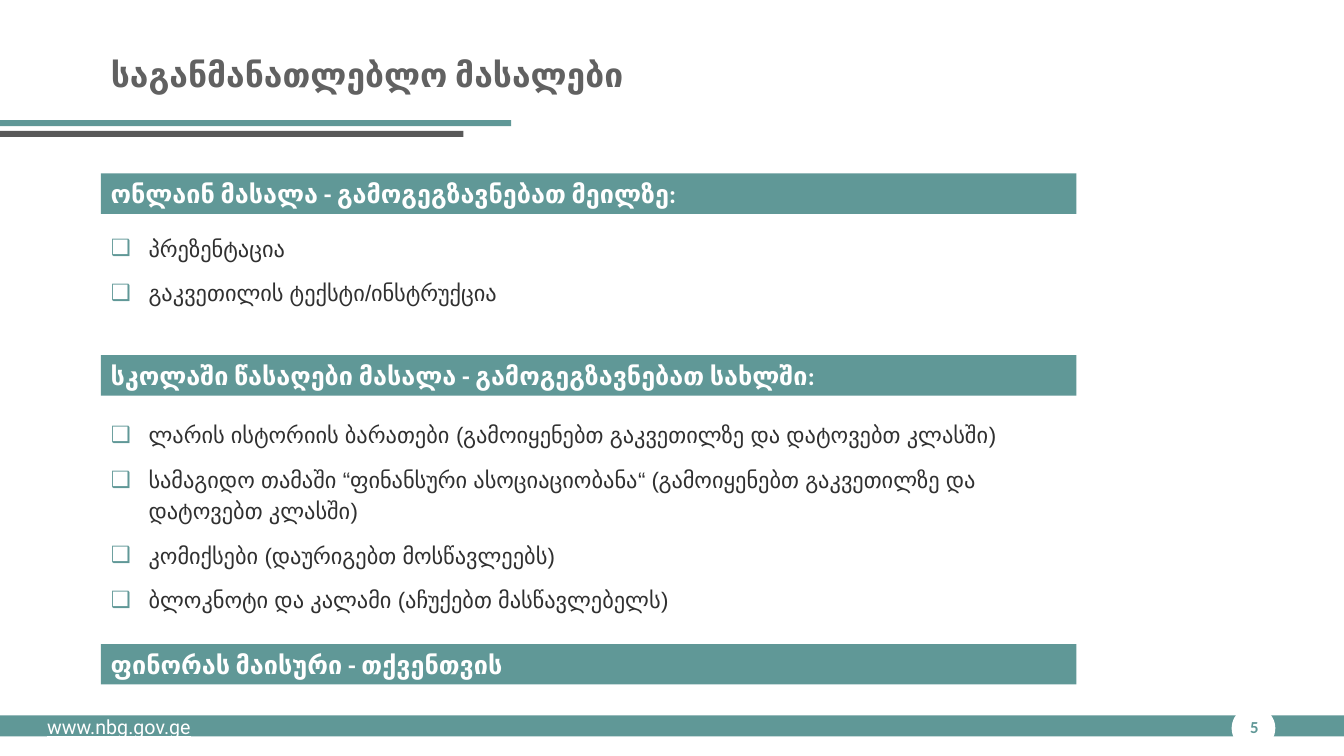
from dataclasses import dataclass
from typing import NamedTuple

from lxml.etree import SubElement
from pptx import Presentation
from pptx.dml.color import RGBColor
from pptx.enum.shapes import MSO_SHAPE
from pptx.enum.text import MSO_ANCHOR, MSO_AUTO_SIZE, PP_ALIGN
from pptx.oxml.ns import qn
from pptx.util import Cm, Pt


@dataclass(frozen=True)
class Theme:
    teal: str = "609897"
    grey: str = "595959"
    title_grey: str = "616161"
    ink: str = "303030"
    white: str = "FFFFFF"
    heading_font: str = "Calibri"
    body_font: str = "Arial"
    link_font: str = "Roboto"
    title_size: int = 24
    heading_size: int = 18
    body_size: int = 16
    link_size: int = 14
    number_size: int = 12
    line_height: int = 22
    item_gap: int = 10


class Box(NamedTuple):
    """A rectangle in centimetres."""
    left: float
    top: float
    width: float
    height: float

    def inner(self, left, top, width, height):
        """Return a box whose corner is measured from this one's."""
        return Box(self.left + left, self.top + top, width, height)

    def lengths(self):
        return [Cm(value) for value in self]


THEME = Theme()
HEADING_HEIGHT = 1.02
BULLET_INDENT = 0.95


def place(shape, box):
    shape.left, shape.top, shape.width, shape.height = box.lengths()


def add_filled(page, box, color, kind=MSO_SHAPE.RECTANGLE):
    shape = page.shapes.add_shape(kind, *box.lengths())
    shape.shadow.inherit = False
    shape.fill.solid()
    shape.fill.fore_color.rgb = RGBColor.from_string(color)
    shape.line.fill.background()
    return shape


def add_bullet(para):
    properties = para._p.get_or_add_pPr()
    properties.set("marL", str(Cm(BULLET_INDENT)))
    properties.set("indent", str(-Cm(BULLET_INDENT)))
    color = SubElement(properties, qn("a:buClr"))
    SubElement(color, qn("a:srgbClr"), val=THEME.teal)
    SubElement(properties, qn("a:buFont"), typeface=THEME.body_font)
    SubElement(properties, qn("a:buChar"), char="❑")


def write(shape, *lines, font, size, color, bold=False, underline=False,
          align=PP_ALIGN.LEFT, anchor=MSO_ANCHOR.TOP, bullets=False):
    """Fill a shape with one paragraph for each line."""
    frame = shape.text_frame
    frame.word_wrap = True
    frame.auto_size = MSO_AUTO_SIZE.NONE
    frame.vertical_anchor = anchor
    for index, line in enumerate(lines):
        para = frame.add_paragraph() if index else frame.paragraphs[0]
        if bullets:
            add_bullet(para)
            para.line_spacing = Pt(THEME.line_height)
        para.space_before = Pt(THEME.item_gap if index else 0)
        para.alignment = align
        span = para.add_run()
        span.text = line
        span.font.name = font
        span.font.size = Pt(size)
        span.font.bold = bold
        span.font.underline = underline
        span.font.color.rgb = RGBColor.from_string(color)


def add_header(page, box, title):
    add_filled(page, box.inner(0, 3.03, 12.88, 0.15), THEME.teal)
    add_filled(page, box.inner(0, 3.3, 11.68, 0.15), THEME.grey)
    place(page.shapes.title, box.inner(2.54, 1.04, 20.4, 1.65))
    write(page.shapes.title, title, font=THEME.heading_font,
          size=THEME.title_size, color=THEME.title_grey, bold=True,
          anchor=MSO_ANCHOR.MIDDLE)


def add_section(page, box, heading, items=(), body=None, gap=0.0):
    """Draw a heading bar and, below it, a list in the body placeholder."""
    bar = add_filled(page, box.inner(0, 0, box.width, HEADING_HEIGHT), THEME.teal)
    write(bar, heading, font=THEME.heading_font, size=THEME.heading_size,
          color=THEME.white, bold=True)
    if body is not None:
        top = HEADING_HEIGHT + gap
        place(body, box.inner(0, top, 25, box.height - top))
        write(body, *items, font=THEME.body_font, size=THEME.body_size,
              color=THEME.ink, bullets=True)


def add_footer(page, box, address, number):
    add_filled(page, box.inner(0, 0.2, box.width, 0.53), THEME.teal)
    add_filled(page, box.inner(31.04, -0.03, 1.1, 1.1), THEME.white, MSO_SHAPE.OVAL)
    link = page.shapes.add_textbox(*box.inner(0.94, 0.05, 5.4, 0.86).lengths())
    write(link, address, font=THEME.link_font, size=THEME.link_size,
          color=THEME.white, underline=True)
    label = page.shapes.add_textbox(*box.inner(31.09, 0.1, 1.04, 0.81).lengths())
    write(label, number, font=THEME.heading_font, size=THEME.number_size,
          color=THEME.teal, bold=True, align=PP_ALIGN.CENTER)


def main():
    deck = Presentation()
    deck.slide_width, deck.slide_height = Cm(33.87), Cm(19.05)
    page = deck.slides.add_slide(deck.slide_layouts.get_by_name("Two Content"))
    online_list, school_list = page.placeholders[1], page.placeholders[2]

    add_header(page, Box(0, 0, 33.87, 3.5), "საგანმანათლებლო მასალები")
    add_section(page, Box(2.54, 4.37, 24.59, 4.16),
                "ონლაინ მასალა - გამოგეგზავნებათ მეილზე:",
                ["პრეზენტაცია", "გაკვეთილის ტექსტი/ინსტრუქცია"],
                online_list, gap=0.3)
    add_section(page, Box(2.54, 8.95, 24.59, 7.28),
                "სკოლაში წასაღები მასალა - გამოგეგზავნებათ სახლში:",
                ["ლარის ისტორიის ბარათები (გამოიყენებთ გაკვეთილზე და დატოვებთ კლასში)",
                 "სამაგიდო თამაში “ფინანსური ასოციაციობანა“ (გამოიყენებთ გაკვეთილზე და დატოვებთ კლასში)",
                 "კომიქსები (დაურიგებთ მოსწავლეებს)",
                 "ბლოკნოტი და კალამი (აჩუქებთ მასწავლებელს)"],
                school_list, gap=0.42)
    add_section(page, Box(2.54, 16.23, 24.59, HEADING_HEIGHT),
                "ფინორას მაისური - თქვენთვის")
    add_footer(page, Box(0, 17.83, 33.87, 1.1), "www.nbg.gov.ge", "5")
    deck.save("out.pptx")


if __name__ == "__main__":
    main()
